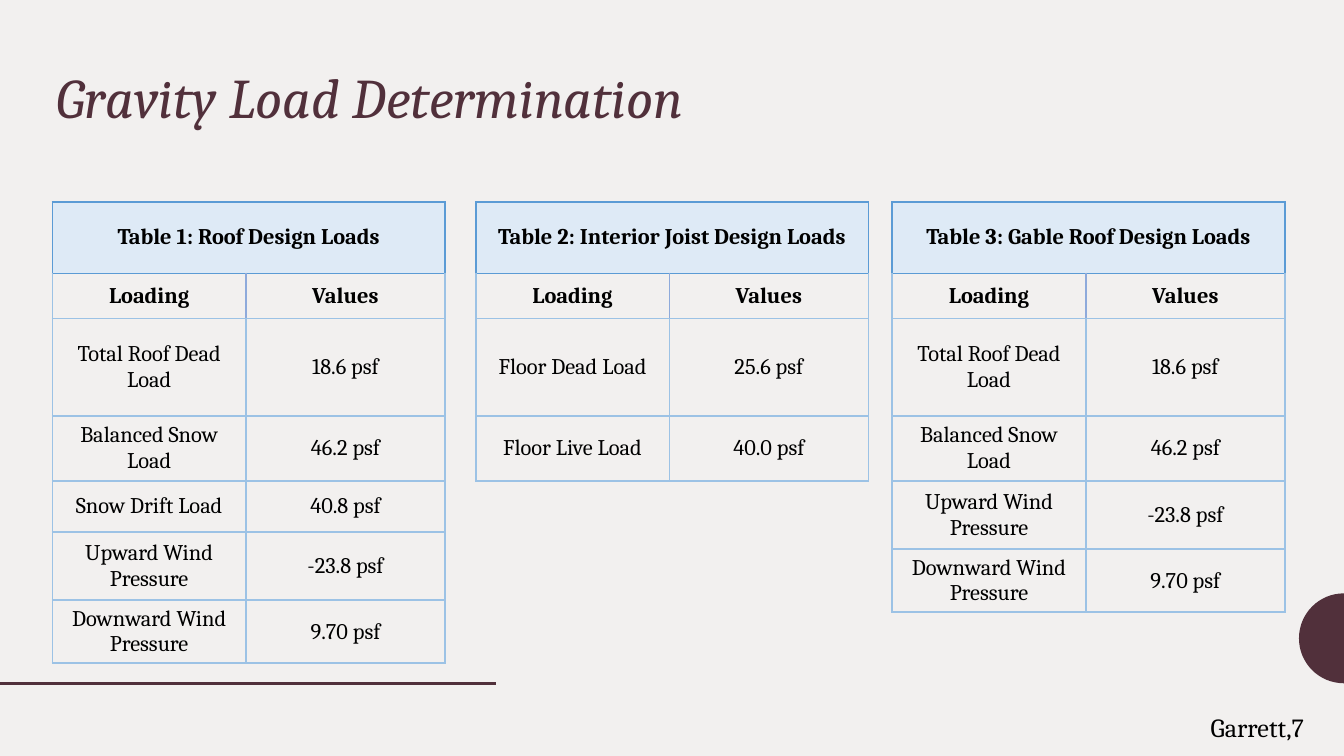
"""Build the gravity load slide with its three load tables."""
import math
import pptx
import pptx.dml.color
import pptx.enum.shapes
import pptx.enum.text
import pptx.oxml
import pptx.oxml.ns
import pptx.util

Pt = pptx.util.Pt
RGB = pptx.dml.color.RGBColor
ANCHOR = pptx.enum.text.MSO_ANCHOR
ALIGN = pptx.enum.text.PP_ALIGN

PAPER = RGB(0xF2, 0xF0, 0xEF)
PLUM = RGB(0x51, 0x30, 0x3B)
BLACK = RGB(0, 0, 0)
PALE = RGB(0xDE, 0xEA, 0xF6)
SKY = RGB(0x9C, 0xC2, 0xE5)
BLUE = RGB(0x5B, 0x9B, 0xD5)
SLATE = RGB(0x8E, 0xAA, 0xDB)

TITLE = "Gravity Load Determination"
FOOTER = "Garrett,7"
HEADS = ("Loading", "Values")
ROOF = ("Total Roof Dead Load", "18.6 psf", 52.2)
SNOW = ("Balanced Snow Load", "46.2 psf", 35)
DRIFT = ("Snow Drift Load", "40.8 psf", 27.3)
UPWARD = ("Upward Wind Pressure", "-23.8 psf", 36.5)
DOWN = ("Downward Wind Pressure", "9.70 psf", 33.8)
TABLES = [
    ("Table 1: Roof Design Loads", 28.1, [ROOF, SNOW, DRIFT, UPWARD, DOWN]),
    ("Table 2: Interior Joist Design Loads", 254.9,
     [("Floor Dead Load", "25.6 psf", 52.2), ("Floor Live Load", "40.0 psf", 35)]),
    ("Table 3: Gable Roof Design Loads", 478, [ROOF, SNOW, UPWARD, DOWN]),
]
WIDTHS = (103.7, 106.6)
TOP, TITLE_H, HEAD_H = 108.2, 38.3, 24.1
WIDE, HIGH = 720, 405


def write(frame, text, size=12, color=BLACK, bold=False, italic=False,
          align=ALIGN.LEFT, spacing=None, indent=None):
    para = frame.paragraphs[0]
    para.text = text
    para.alignment = align
    if spacing:
        para.line_spacing = spacing
    if indent is not None:
        props = para._p.get_or_add_pPr()
        props.set("marL", "0")
        props.set("indent", str(Pt(indent)))
    font = para.runs[0].font
    font.name, font.size, font.color.rgb = "Cambria", Pt(size), color
    font.bold, font.italic = bold, italic


def inset(frame, anchor):
    frame.word_wrap = True
    frame.auto_size = pptx.enum.text.MSO_AUTO_SIZE.NONE
    frame.vertical_anchor = anchor
    frame.margin_left = frame.margin_right = Pt(7.2)
    frame.margin_top = frame.margin_bottom = Pt(7.2)


def border(cell, left, right, top, bottom):
    props = cell._tc.get_or_add_tcPr()
    for spot, (side, color) in enumerate(zip("LRTB", (left, right, top, bottom))):
        props.insert(spot, pptx.oxml.parse_xml(
            f'<a:ln{side} {pptx.oxml.ns.nsdecls("a")} w="{Pt(1)}"><a:solidFill>'
            f'<a:srgbClr val="{color}"/></a:solidFill></a:ln{side}>'))


def add_loads(slide, name, left, loads):
    rows = [(name, "", TITLE_H), (*HEADS, HEAD_H), *loads]
    high = sum(row[2] for row in rows)
    table = slide.shapes.add_table(
        len(rows), 2, Pt(left), Pt(TOP), Pt(sum(WIDTHS)), Pt(high)).table
    table.first_row = table.horz_banding = False
    for col, width in zip(table.columns, WIDTHS):
        col.width = Pt(width)
    table.cell(0, 0).merge(table.cell(0, 1))
    for r, (*texts, height) in enumerate(rows):
        table.rows[r].height = Pt(height)
        for c, text in enumerate(texts):
            cell = table.cell(r, c)
            cell.vertical_anchor = ANCHOR.MIDDLE
            cell.margin_left = cell.margin_right = Pt(5.4)
            cell.margin_top = cell.margin_bottom = 0
            if r == 0:
                cell.fill.solid()
                cell.fill.fore_color.rgb = PALE
                border(cell, BLUE, BLUE, BLUE, BLUE)
            else:
                cell.fill.background()
                inner = SLATE if r == 1 else SKY
                border(cell, inner if c else SKY, SKY if c else inner,
                       BLUE if r == 1 else SKY, SKY)
            if text:
                write(cell.text_frame, text, bold=r < 2,
                      align=ALIGN.CENTER, indent=-5.76)


def add_decor(slide):
    mid, radius, steps = 342, 24.1, 32
    arc = []
    for step in range(steps + 1):
        turn = math.pi * (0.5 + step / steps)
        arc.append((100 * (WIDE + radius * math.cos(turn)),
                    100 * (mid + radius * math.sin(turn))))
    pen = slide.shapes.build_freeform(*arc[0], scale=Pt(1) / 100)
    pen.add_line_segments(arc[1:], close=True)
    half = pen.convert_to_shape()
    half.shadow.inherit = False
    half.fill.solid()
    half.fill.fore_color.rgb = PLUM
    half.line.fill.background()

    rule = slide.shapes.add_connector(
        pptx.enum.shapes.MSO_CONNECTOR.STRAIGHT, 0, Pt(366.2), Pt(265.7), Pt(366.2))
    rule.line.color.rgb, rule.line.width = PLUM, Pt(2)
    rule._element.spPr.append(pptx.oxml.parse_xml(
        f'<a:effectLst {pptx.oxml.ns.nsdecls("a")}/>'))


def main():
    deck = pptx.Presentation()
    deck.slide_width, deck.slide_height = Pt(WIDE), Pt(HIGH)
    slide = deck.slides.add_slide(deck.slide_layouts[5])
    slide.background.fill.solid()
    slide.background.fill.fore_color.rgb = PAPER
    add_decor(slide)

    title = slide.shapes.title
    title.left, title.top, title.width, title.height = Pt(23), Pt(17.3), Pt(552), Pt(59.8)
    inset(title.text_frame, ANCHOR.BOTTOM)
    write(title.text_frame, TITLE, size=30, color=PLUM, italic=True, spacing=0.9)

    for name, left, loads in TABLES:
        add_loads(slide, name, left, loads)

    footer = slide.shapes.add_textbox(Pt(641.5), Pt(380.9), Pt(78.5), Pt(17.3))
    inset(footer.text_frame, ANCHOR.MIDDLE)
    write(footer.text_frame, FOOTER, size=14)
    deck.save("out.pptx")


if __name__ == "__main__":
    main()
